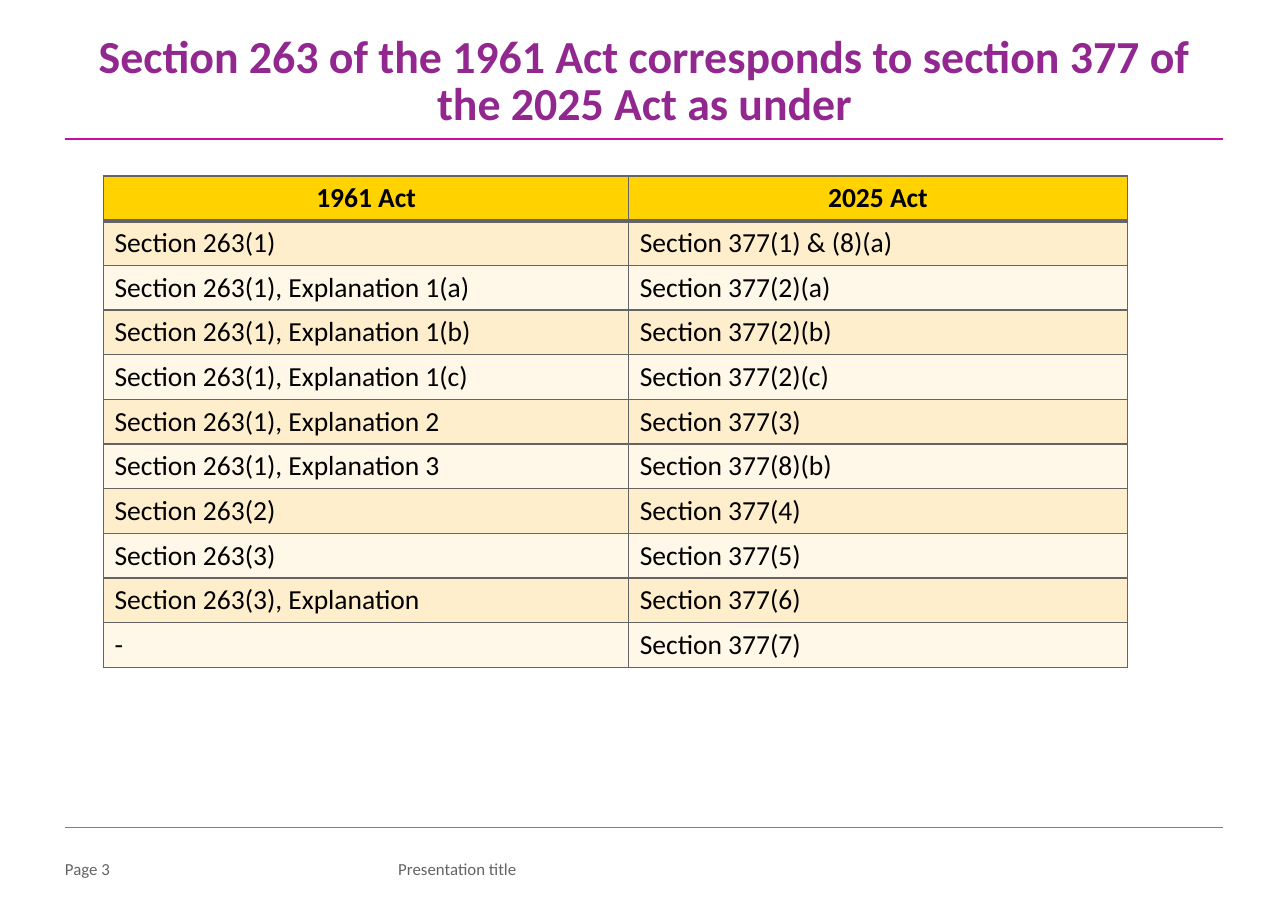
from pptx import Presentation
from pptx.dml.color import RGBColor
from pptx.enum.shapes import MSO_CONNECTOR
from pptx.enum.text import MSO_ANCHOR, PP_ALIGN
from pptx.oxml import parse_xml
from pptx.oxml.ns import nsdecls
from pptx.util import Cm, Pt


def color(code):
    return RGBColor.from_string(code)


def style(para, size, code, bold=False, align=PP_ALIGN.LEFT):
    para.alignment = align
    for run in para.runs:
        run.font.name = "Calibri"
        run.font.size = Pt(size)
        run.font.bold = bold
        run.font.color.rgb = color(code)


deck = Presentation()
deck.slide_width, deck.slide_height = Cm(29.72), Cm(21.08)
slide = deck.slides.add_slide(deck.slide_layouts[6])

for y, code, width in [(3.2, "CA0CA1", 1.5), (19.08, "808080", 0.25)]:
    rule = slide.shapes.add_connector(
        MSO_CONNECTOR.STRAIGHT, Cm(1.5), Cm(y), Cm(28.22), Cm(y))
    rule.line.color.rgb = color(code)
    rule.line.width = Pt(width)
    rule._element.spPr.append(parse_xml(f"<a:effectLst {nsdecls('a')}/>"))

title = "Section 263 of the 1961 Act corresponds to section 377 of the 2025 Act as under"
labels = [
    (title, 1.5, 0.84, 26.75, 2.13, 30, "91278F", True, PP_ALIGN.CENTER),
    ("Page 3", 1.5, 19.81, 2.01, 0.56, 11, "646464", False, PP_ALIGN.LEFT),
    ("Presentation title", 9.19, 19.81, 9.55, 0.56, 11, "646464", False, PP_ALIGN.LEFT),
]
for text, x, y, w, h, size, code, bold, align in labels:
    frame = slide.shapes.add_textbox(Cm(x), Cm(y), Cm(w), Cm(h)).text_frame
    frame.word_wrap = True
    frame.margin_left = frame.margin_right = 0
    frame.margin_top = frame.margin_bottom = 0
    frame.text = text
    para = frame.paragraphs[0]
    style(para, size, code, bold, align)
    if text == title:
        para.line_spacing = 0.85

rows = [
    ("1961 Act", "2025 Act"),
    ("Section 263(1)", "Section 377(1) & (8)(a)"),
    ("Section 263(1), Explanation 1(a)", "Section 377(2)(a)"),
    ("Section 263(1), Explanation 1(b)", "Section 377(2)(b)"),
    ("Section 263(1), Explanation 1(c)", "Section 377(2)(c)"),
    ("Section 263(1), Explanation 2", "Section 377(3)"),
    ("Section 263(1), Explanation 3", "Section 377(8)(b)"),
    ("Section 263(2)", "Section 377(4)"),
    ("Section 263(3)", "Section 377(5)"),
    ("Section 263(3), Explanation", "Section 377(6)"),
    ("-", "Section 377(7)"),
]
high = 1.03
table = slide.shapes.add_table(
    len(rows), 2, Cm(2.39), Cm(4.06), Cm(23.62), Cm(high * len(rows))).table
table.columns[0].width, table.columns[1].width = Cm(12.12), Cm(11.5)

for i, row in enumerate(rows):
    table.rows[i].height = Cm(high)
    head = i == 0
    fill = "FFD200" if head else ("FFF7E7", "FFEECC")[i % 2]
    for j, text in enumerate(row):
        cell = table.cell(i, j)
        cell.text = text
        cell.vertical_anchor = MSO_ANCHOR.MIDDLE
        style(cell.text_frame.paragraphs[0], 18, "000000", head,
              PP_ALIGN.CENTER if head else PP_ALIGN.LEFT)
        props = cell._tc.get_or_add_tcPr()
        for side in "LRTB":
            thick = (head and side == "B") or (i == 1 and side == "T")
            props.append(parse_xml(
                f'<a:ln{side} {nsdecls("a")} w="{Pt(3 if thick else 1)}">'
                '<a:solidFill><a:srgbClr val="646464"/></a:solidFill>'
                f'</a:ln{side}>'))
        cell.fill.solid()
        cell.fill.fore_color.rgb = color(fill)

deck.save("out.pptx")
